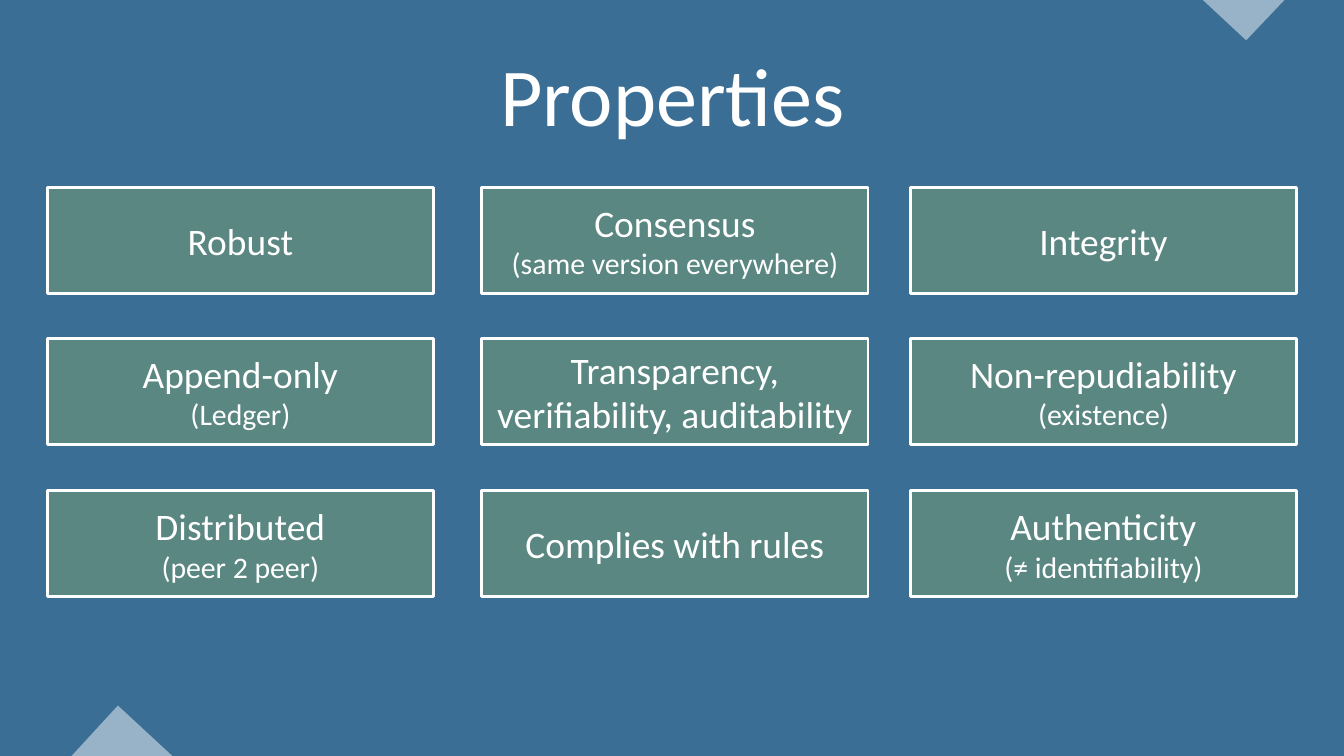
from dataclasses import dataclass
from pptx import Presentation
from pptx import util as u
from pptx.dml.color import RGBColor
from pptx.enum import shapes, text
from pptx.oxml.ns import qn
from lxml import etree

# Content: rows of (name, detail)
HEAD = "Properties"
GRID = [
    [("Robust", ""), ("Consensus", "(same version everywhere)"), ("Integrity", "")],
    [("Append-only", "(Ledger)"), ("Transparency, verifiability, auditability", ""),
     ("Non-repudiability", "(existence)")],
    [("Distributed", "(peer 2 peer)"), ("Complies with rules", ""),
     ("Authenticity", "(≠ identifiability)")],
]
# Corner triangles, as points in inches
TIPS = [
    [(11.93, 0), (12.74, 0), (12.36, 0.4)],
    [(0.71, 7.5), (1.17, 7), (1.71, 7.5)],
]


@dataclass(frozen=True)
class Theme:
    back: str = "004376"
    box: str = "9BBB59"
    white: str = "FFFFFF"
    font: str = "Calibri"
    head: float = 58.7
    name: float = 26.7
    note: float = 21.3
    edge: float = 2


T = Theme()
WIDE, HIGH = 13.33, 7.5
COLS = [0.47, 4.78, 9.03]
ROWS = [1.86, 3.36, 4.87]
BOX_W, BOX_H = 3.83, 1.05


def paint(shape, color, alpha):
    """Fill with a colour at the given percent of opacity."""
    shape.shadow.inherit = False
    shape.fill.solid()
    shape.fill.fore_color.rgb = RGBColor.from_string(color)
    node = shape._element.spPr.find(qn("a:solidFill"))[0]
    etree.SubElement(node, qn("a:alpha")).set("val", str(alpha * 1000))


def write(para, words, size):
    para.alignment = text.PP_ALIGN.CENTER
    run = para.add_run()
    run.text = words
    run.font.name = T.font
    run.font.size = u.Pt(size)
    run.font.color.rgb = RGBColor.from_string(T.white)


def add_box(slide, x, y, w, h):
    return slide.shapes.add_shape(shapes.MSO_SHAPE.RECTANGLE,
                                  *[u.Inches(v) for v in (x, y, w, h)])


def main():
    deck = Presentation()
    deck.slide_width, deck.slide_height = u.Inches(WIDE), u.Inches(HIGH)
    slide = deck.slides.add_slide(deck.slide_layouts[5])

    # Background tint and corner triangles
    tint = add_box(slide, 0, 0, WIDE, HIGH)
    paint(tint, T.back, 77)
    tint.line.fill.background()
    for points in TIPS:
        first, *rest = [(u.Inches(x), u.Inches(y)) for x, y in points]
        form = slide.shapes.build_freeform(*first)
        form.add_line_segments(rest, close=True)
        tip = form.convert_to_shape()
        paint(tip, T.white, 48)
        tip.line.fill.background()

    # Title, brought in front of the tint
    title = slide.shapes.title
    title.left, title.top = u.Inches(0.67), u.Inches(0.3)
    title.width, title.height = u.Inches(12), u.Inches(1.25)
    title.text_frame.vertical_anchor = text.MSO_ANCHOR.MIDDLE
    write(title.text_frame.paragraphs[0], HEAD, T.head)
    slide.shapes._spTree.append(title._element)

    # Grid of properties
    for y, row in zip(ROWS, GRID):
        for x, (name, note) in zip(COLS, row):
            box = add_box(slide, x, y, BOX_W, BOX_H)
            paint(box, T.box, 33)
            box.line.color.rgb = RGBColor.from_string(T.white)
            box.line.width = u.Pt(T.edge)
            frame = box.text_frame
            frame.word_wrap = True
            frame.vertical_anchor = text.MSO_ANCHOR.MIDDLE
            write(frame.paragraphs[0], name, T.name)
            if note:
                write(frame.add_paragraph(), note, T.note)

    deck.save("out.pptx")


if __name__ == "__main__":
    main()
